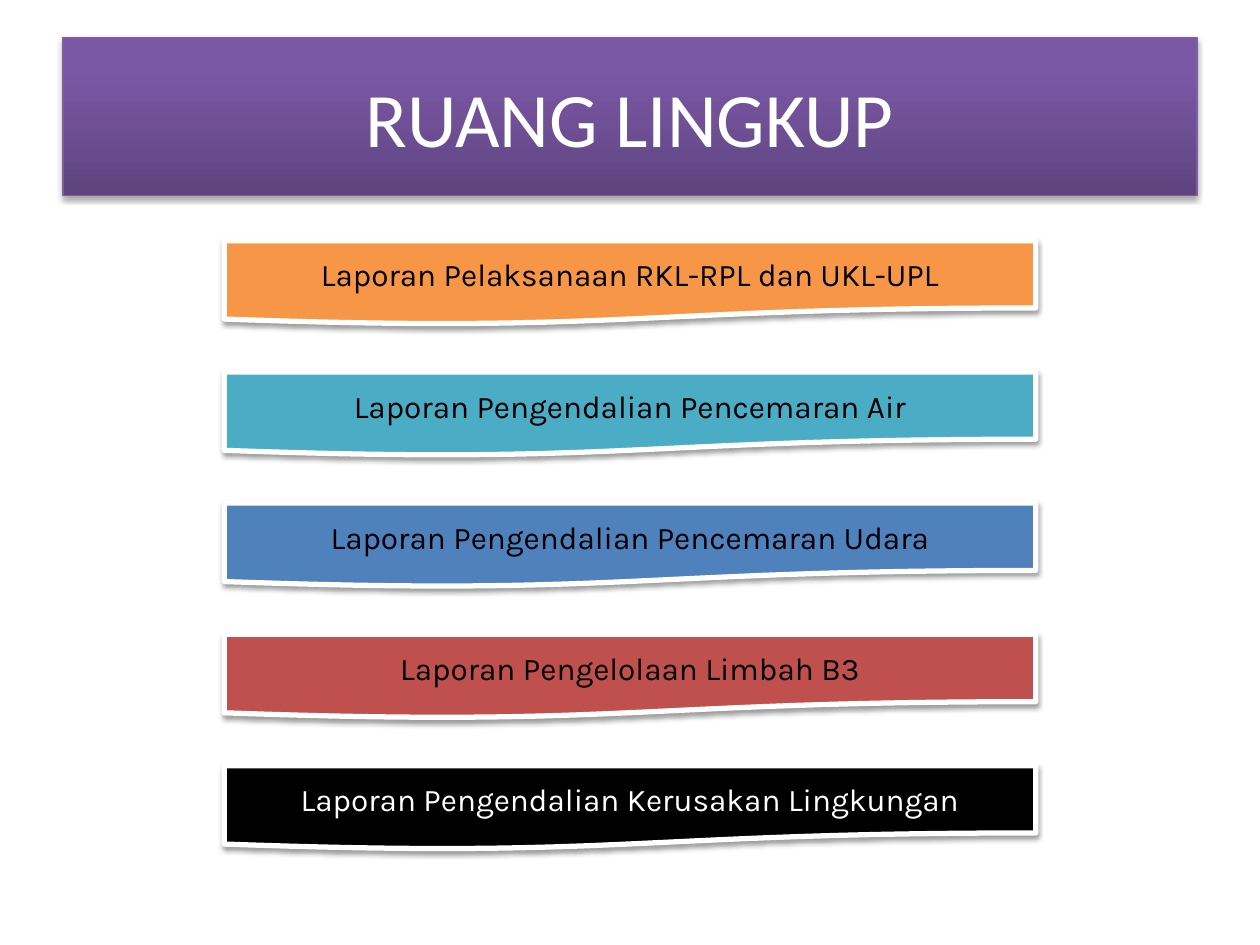
from copy import deepcopy
from dataclasses import dataclass

from lxml import etree
from pptx import Presentation
from pptx.dml.color import RGBColor
from pptx.enum.shapes import MSO_SHAPE
from pptx.enum.text import MSO_ANCHOR, PP_ALIGN
from pptx.oxml.ns import qn
from pptx.shapes.autoshape import Shape
from pptx.slide import Slide
from pptx.util import Pt

RECTANGLE = MSO_SHAPE.RECTANGLE
DOCUMENT = MSO_SHAPE.FLOWCHART_DOCUMENT
MIDDLE = MSO_ANCHOR.MIDDLE
CENTER = PP_ALIGN.CENTER

COLORS = {
    "white": "FFFFFF",
    "black": "000000",
    "orange": "F79646",
    "teal": "4BACC6",
    "blue": "4F81BD",
    "red": "C0504D",
    "purple_dark": "5F4480",
    "purple_mid": "7B58A6",
    "purple_light": "7C57A8",
    "purple_edge": "7D60A0",
}
TITLE_STOPS = [(0, "purple_dark"), (0.8, "purple_mid"), (1, "purple_light")]

BANNER_LEFT = 128.2
BANNER_TOP = 137.5
BANNER_WIDTH = 463.6
BANNER_HEIGHT = 48
BANNER_PITCH = 75


@dataclass
class Banner:
    text: str
    fill: str
    text_color: str = "black"


@dataclass
class Style:
    font: str
    size: float
    text_color: str
    line_color: str
    line_width: float
    shadow_opacity: int
    shadow_distance: float


BANNERS = [
    Banner("Laporan Pelaksanaan RKL-RPL dan UKL-UPL", "orange"),
    Banner("Laporan Pengendalian Pencemaran Air", "teal"),
    Banner("Laporan Pengendalian Pencemaran Udara", "blue"),
    Banner("Laporan Pengelolaan Limbah B3", "red"),
    Banner("Laporan Pengendalian Kerusakan Lingkungan", "black", "white"),
]


def rgb(name: str) -> RGBColor:
    return RGBColor.from_string(COLORS[name])


def add_shadow(box: Shape, opacity: int, distance: float) -> None:
    box.shadow.inherit = False
    effects = box._element.spPr.find(qn("a:effectLst"))
    shadow = etree.SubElement(
        effects, qn("a:outerShdw"), blurRad=str(Pt(3.1)),
        dist=str(Pt(distance)), dir="5400000", rotWithShape="0",
    )
    color = etree.SubElement(shadow, qn("a:srgbClr"), val=COLORS["black"])
    etree.SubElement(color, qn("a:alpha"), val=str(opacity * 1000))


def add_box(page: Slide, kind: MSO_SHAPE, left: float, top: float,
            width: float, height: float, text: str, style: Style) -> Shape:
    box = page.shapes.add_shape(kind, Pt(left), Pt(top), Pt(width), Pt(height))
    box.line.color.rgb = rgb(style.line_color)
    box.line.width = Pt(style.line_width)
    add_shadow(box, style.shadow_opacity, style.shadow_distance)
    frame = box.text_frame
    frame.text = text
    frame.word_wrap = True
    frame.vertical_anchor = MIDDLE
    para = frame.paragraphs[0]
    para.alignment = CENTER
    font = para.runs[0].font
    font.name = style.font
    font.size = Pt(style.size)
    font.color.rgb = rgb(style.text_color)
    return box


def fill_gradient(box: Shape, stops: list[tuple[float, str]]) -> None:
    box.fill.gradient()
    box.fill.gradient_angle = 90
    stop_list = box._element.spPr.find(qn("a:gradFill")).find(qn("a:gsLst"))
    while len(stop_list) < len(stops):
        stop_list.append(deepcopy(stop_list[0]))
    for stop, (position, color) in zip(box.fill.gradient_stops, stops):
        stop.position = position
        stop.color.rgb = rgb(color)


def add_title(page: Slide) -> None:
    style = Style("Calibri", 44, "white", "purple_edge", 0.75, 35, 1.8)
    box = add_box(page, RECTANGLE, 36, 21.6, 648, 90, "RUANG LINGKUP", style)
    fill_gradient(box, TITLE_STOPS)


def add_banner(page: Slide, banner: Banner, index: int) -> None:
    style = Style("Karla", 18, banner.text_color, "white", 3, 38, 1.6)
    top = BANNER_TOP + index * BANNER_PITCH
    box = add_box(page, DOCUMENT, BANNER_LEFT, top, BANNER_WIDTH,
                  BANNER_HEIGHT, banner.text, style)
    box.fill.solid()
    box.fill.fore_color.rgb = rgb(banner.fill)


def main() -> None:
    deck = Presentation()
    deck.slide_width = Pt(720)
    deck.slide_height = Pt(540)
    page = deck.slides.add_slide(deck.slide_layouts[6])
    add_title(page)
    for index, banner in enumerate(BANNERS):
        add_banner(page, banner, index)
    deck.save("out.pptx")


if __name__ == "__main__":
    main()
